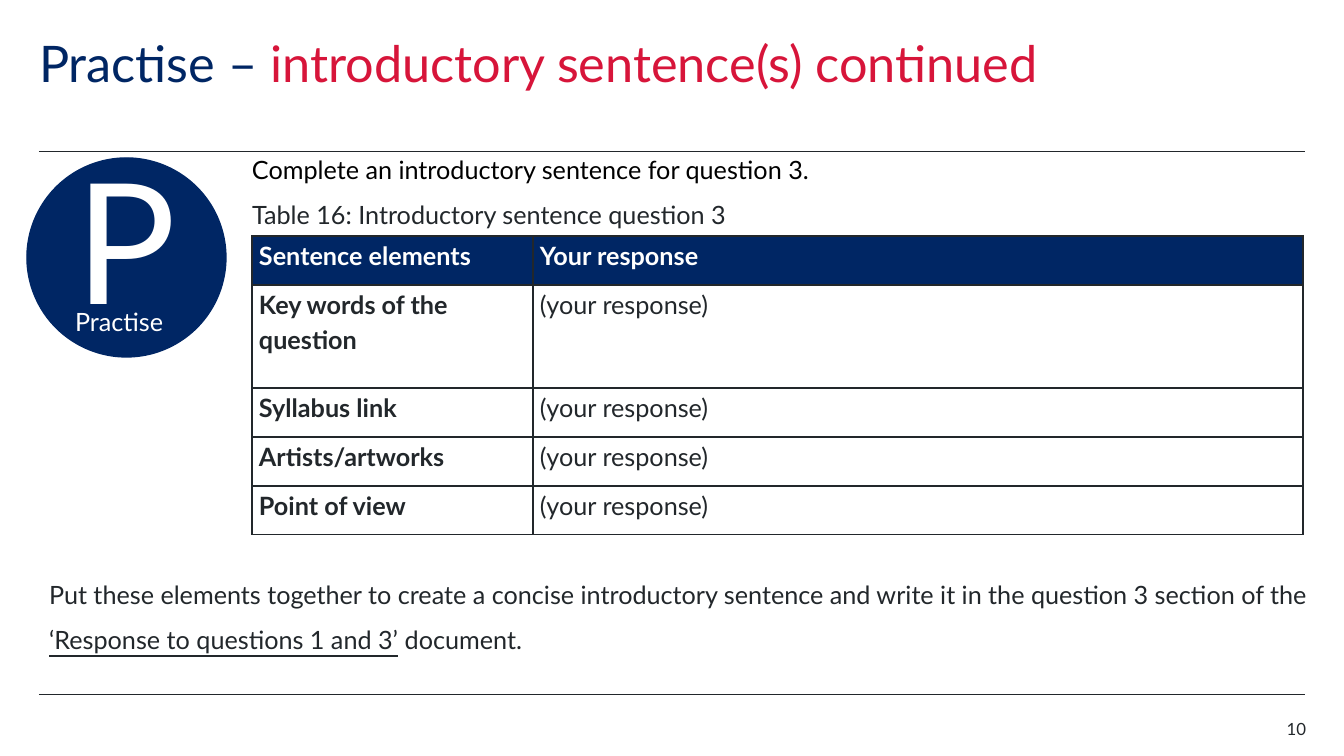
from lxml import etree
from pptx import Presentation
from pptx.dml.color import RGBColor
from pptx.enum import shapes, text
from pptx.oxml.ns import qn
from pptx.util import Pt

PX = 12192000 // 1344  # EMU per px


class Theme:
    font = "Lato"
    navy = RGBColor(0x00, 0x26, 0x64)
    red = RGBColor(0xD7, 0x15, 0x3A)
    ink = RGBColor(0x22, 0x27, 0x2B)
    black = RGBColor(0, 0, 0)
    white = RGBColor(0xFF, 0xFF, 0xFF)
    title, letter, body, small = Pt(36), Pt(120), Pt(18), Pt(12)


def style(p, size, color, bold=False):
    p.font.name, p.font.size, p.font.bold = Theme.font, size, bold
    p.font.color.rgb = color


def add_text(parent, box, words, size=Theme.body, color=Theme.ink, inset=(10, 5)):
    tf = parent.add_textbox(*(v * PX for v in box)).text_frame
    tf.word_wrap = True
    tf.margin_left = tf.margin_right = inset[0] * PX
    tf.margin_top = tf.margin_bottom = inset[1] * PX
    p = tf.paragraphs[0]
    for i, part in enumerate(words):
        r = p.add_run()
        r.text = part
        if i == 1:  # the second run is the document link
            r.font.underline = True
    style(p, size, color)
    return p


prs = Presentation()
prs.slide_width, prs.slide_height = 1344 * PX, 756 * PX
s = prs.slides.add_slide(prs.slide_layouts[5])

# Rules above and below the content
for y in (151, 694):
    rule = s.shapes.add_connector(shapes.MSO_CONNECTOR.STRAIGHT,
                                  39 * PX, y * PX, 1305 * PX, y * PX)
    rule.line.color.rgb = Theme.ink
    rule.line.width = Pt(0.5)
    etree.SubElement(rule._element.spPr, qn("a:effectLst"))

# Title
title = s.shapes.title
title.left, title.top, title.width, title.height = (v * PX for v in (39, 39, 1111, 111))
tf = title.text_frame
tf.margin_left = tf.margin_right = tf.margin_top = tf.margin_bottom = 0
tf.vertical_anchor = text.MSO_ANCHOR.TOP
tf.auto_size = text.MSO_AUTO_SIZE.NONE
p = tf.paragraphs[0]
p.alignment = text.PP_ALIGN.LEFT
p.line_spacing = 0.9
style(p, Theme.title, Theme.navy)
for words, color in (("Practise – ", Theme.navy),
                     ("introductory sentence(s) continued", Theme.red)):
    r = p.add_run()
    r.text = words
    r.font.color.rgb = color

# Practise badge
badge = s.shapes.add_group_shape()
disc = badge.shapes.add_shape(shapes.MSO_SHAPE.OVAL, 27 * PX, 158 * PX, 199 * PX, 199 * PX)
disc.shadow.inherit = False
disc.fill.solid()
disc.fill.fore_color.rgb = Theme.navy
disc.line.color.rgb = Theme.navy
disc.line.width = Pt(1)
tf = disc.text_frame
tf.vertical_anchor = text.MSO_ANCHOR.MIDDLE
tf.margin_top, tf.margin_bottom = 5 * PX, 45 * PX
p = tf.paragraphs[0]
p.text = "P"
p.alignment = text.PP_ALIGN.CENTER
style(p, Theme.letter, Theme.white)
add_text(badge.shapes, (75, 306, 104, 48), ["Practise"], color=Theme.white, inset=(0, 0))

# Instruction and caption
add_text(s.shapes, (242, 149, 1111, 40),
         ["Complete an introductory sentence for question 3."], color=Theme.black)
add_text(s.shapes, (242, 194, 821, 40), ["Table 16: Introductory sentence question 3"])

# Response table
elements = ["Key words of the question", "Syllabus link", "Artists/artworks", "Point of view"]
rows = [("Sentence elements", "Your response")] + [(e, "(your response)") for e in elements]
heights = [49, 103, 49, 49, 49]
table = s.shapes.add_table(len(rows), 2, 252 * PX, 236 * PX,
                           1051 * PX, sum(heights) * PX).table
table.horz_banding = False
for col, width in zip(table.columns, (281, 770)):
    col.width = width * PX
for i, (row, height) in enumerate(zip(rows, heights)):
    table.rows[i].height = height * PX
    for j, words in enumerate(row):
        cell = table.cell(i, j)
        cell.margin_left = cell.margin_right = 7 * PX
        cell.margin_top = cell.margin_bottom = 0
        tcPr = cell._tc.get_or_add_tcPr()
        for side in ("lnL", "lnR", "lnT", "lnB"):
            ln = etree.SubElement(tcPr, qn("a:" + side), w=str(Pt(1)))
            fill = etree.SubElement(ln, qn("a:solidFill"))
            etree.SubElement(fill, qn("a:srgbClr"), val=str(Theme.ink))
        cell.fill.solid()
        cell.fill.fore_color.rgb = Theme.white if i else Theme.navy
        p = cell.text_frame.paragraphs[0]
        p.text = words
        p.line_spacing = 1.15
        p.space_after = Pt(4)
        style(p, Theme.body, Theme.ink if i else Theme.white, bold=i == 0 or j == 0)

# Closing task
p = add_text(s.shapes, (39, 559, 1287, 96),
             ["Put these elements together to create a concise introductory sentence "
              "and write it in the question 3 section of the ",
              "‘Response to questions 1 and 3’", " document."])
p.line_spacing = 1.5

# Slide number
p = add_text(s.shapes, (1227, 719, 79, 20), ["10"], size=Theme.small, inset=(0, 0))
p.alignment = text.PP_ALIGN.RIGHT

prs.save("out.pptx")
